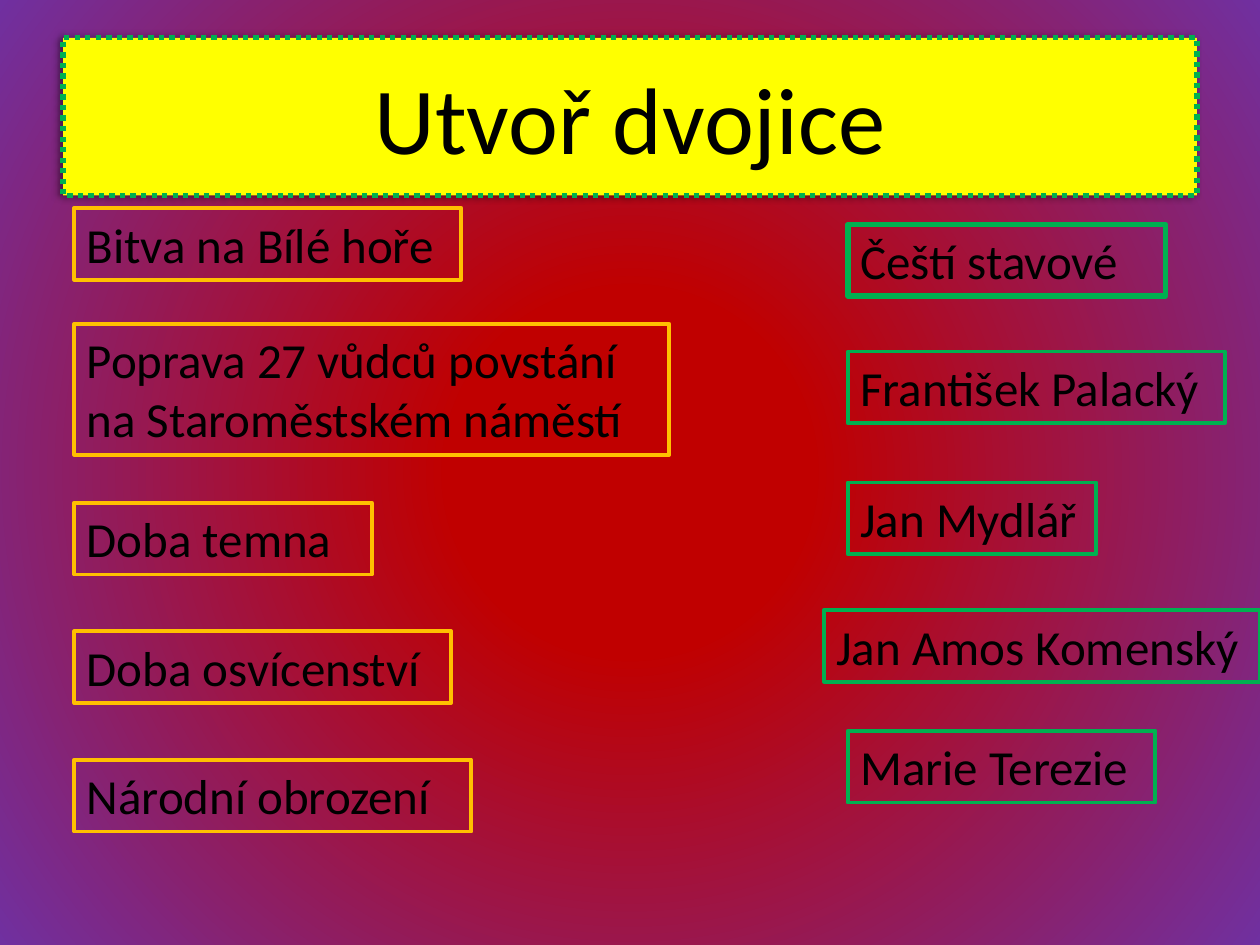
from dataclasses import dataclass

from lxml.etree import SubElement
from pptx import Presentation
from pptx.dml.color import RGBColor
from pptx.enum.dml import MSO_LINE
from pptx.enum.text import MSO_ANCHOR, MSO_AUTO_SIZE, PP_ALIGN
from pptx.oxml import parse_xml
from pptx.oxml.ns import nsdecls, qn
from pptx.util import Inches, Pt

SLIDE_WIDTH, SLIDE_HEIGHT = Inches(10), Inches(7.5)
# The grid has 100 columns and 75 rows of equal size.
COLUMN, ROW = SLIDE_WIDTH / 100, SLIDE_HEIGHT / 75

RED, PURPLE = "C00000", "7030A0"
YELLOW, ORANGE, GREEN, BLACK = "FFFF00", "FFC000", "00B050", "000000"
EVENT_COLUMN, PERSON_COLUMN = 5.9, 67.3
LINE_ROWS = 5.7


@dataclass(frozen=True)
class Card:
    text: str
    column: float
    row: float
    columns: float
    outline: str
    rows: float = LINE_ROWS
    outline_width: float = 2.25


CARDS = [
    Card("Bitva na Bílé hoře", EVENT_COLUMN, 16.5, 30.7, ORANGE),
    Card("Poprava 27 vůdců povstání na Staroměstském náměstí",
         EVENT_COLUMN, 25.7, 47.2, ORANGE, rows=10.4),
    Card("Doba temna", EVENT_COLUMN, 39.9, 23.6, ORANGE),
    Card("Doba osvícenství", EVENT_COLUMN, 50.1, 29.9, ORANGE),
    Card("Národní obrození", EVENT_COLUMN, 60.3, 31.5, ORANGE),
    Card("Čeští stavové", PERSON_COLUMN, 17.8, 25.2, GREEN, outline_width=3),
    Card("František Palacký", PERSON_COLUMN, 27.9, 29.9, GREEN),
    Card("Jan Mydlář", PERSON_COLUMN, 38.3, 19.7, GREEN),
    Card("Jan Amos Komenský", 65.4, 48.4, 34.6, GREEN),
    Card("Marie Terezie", PERSON_COLUMN, 58, 24.4, GREEN),
]


def rgb(code: str) -> RGBColor:
    return RGBColor.from_string(code)


def grid_box(column: float, row: float, columns: float, rows: float) -> tuple:
    """Return left, top, width and height for a place on the grid."""
    return (round(column * COLUMN), round(row * ROW),
            round(columns * COLUMN), round(rows * ROW))


def write(shape, text: str, *, size: float, color: str = BLACK,
          align=PP_ALIGN.LEFT, anchor=MSO_ANCHOR.TOP) -> None:
    frame = shape.text_frame
    frame.word_wrap = True
    frame.vertical_anchor = anchor
    paragraph = frame.paragraphs[0]
    paragraph.alignment = align
    run = paragraph.add_run()
    run.text = text
    run.font.name = "Calibri"
    run.font.size = Pt(size)
    run.font.color.rgb = rgb(color)


def outline(shape, color: str, width: float) -> None:
    shape.line.color.rgb = rgb(color)
    shape.line.width = Pt(width)


def paint_background(slide) -> None:
    """Fill the background with a gradient circling out from the centre."""
    fill = slide.background.fill
    fill.gradient()
    for stop, (position, color) in zip(fill.gradient_stops,
                                       [(0.23, RED), (1, PURPLE)]):
        stop.position = position
        stop.color.rgb = rgb(color)
    gradient = next(slide.element.iter(qn("a:gradFill")))
    gradient.remove(gradient.find(qn("a:lin")))
    circle = SubElement(gradient, qn("a:path"), path="circle")
    SubElement(circle, qn("a:fillToRect"),
               {side: "50000" for side in "ltrb"})


def draw_title(slide, text: str) -> None:
    title = slide.shapes.title
    title.left, title.top, title.width, title.height = grid_box(5, 3, 90, 12.5)
    title.fill.solid()
    title.fill.fore_color.rgb = rgb(YELLOW)
    outline(title, GREEN, 3)
    title.line.dash_style = MSO_LINE.ROUND_DOT
    title.element.spPr.append(parse_xml(
        f'<a:effectLst {nsdecls("a")}>'
        f'<a:outerShdw blurRad="{Pt(4)}" dist="{Pt(3)}" dir="10800000">'
        f'<a:srgbClr val="{BLACK}"><a:alpha val="40000"/></a:srgbClr>'
        '</a:outerShdw></a:effectLst>'))
    write(title, text, size=54, align=PP_ALIGN.CENTER,
          anchor=MSO_ANCHOR.MIDDLE)


def draw_card(slide, card: Card) -> None:
    box = slide.shapes.add_textbox(
        *grid_box(card.column, card.row, card.columns, card.rows))
    outline(box, card.outline, card.outline_width)
    write(box, card.text, size=28)
    box.text_frame.auto_size = MSO_AUTO_SIZE.SHAPE_TO_FIT_TEXT


def main() -> None:
    presentation = Presentation()
    presentation.slide_width = SLIDE_WIDTH
    presentation.slide_height = SLIDE_HEIGHT
    title_only = presentation.slide_layouts.get_by_name("Title Only")
    slide = presentation.slides.add_slide(title_only)
    paint_background(slide)
    draw_title(slide, "Utvoř dvojice")
    for card in CARDS:
        draw_card(slide, card)
    presentation.save("out.pptx")


if __name__ == "__main__":
    main()
